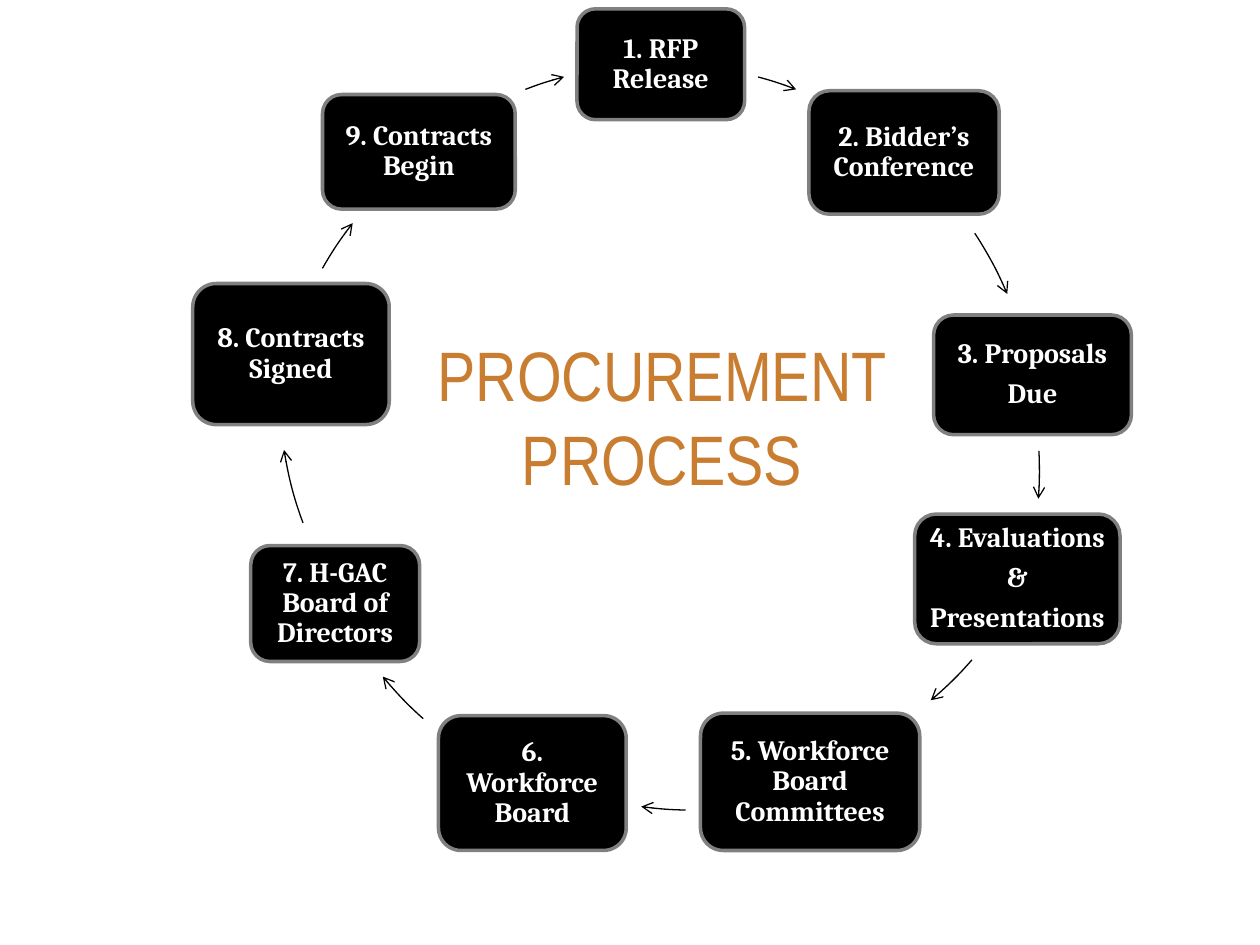
from dataclasses import dataclass

from lxml.etree import SubElement
from pptx import Presentation
from pptx.dml.color import RGBColor
from pptx.enum.shapes import MSO_SHAPE as Preset
from pptx.enum.text import MSO_ANCHOR as Anchor, PP_ALIGN as Align
from pptx.oxml.ns import qn
from pptx.shapes.autoshape import Shape
from pptx.slide import Slide
from pptx.util import Inches, Pt

RING_DIAMETER = 5.97
ANGLE_SCALE = 0.6


@dataclass(frozen=True)
class Step:
    label: str
    left: float
    top: float
    width: float
    height: float


@dataclass(frozen=True)
class Arc:
    left: float
    top: float
    start: float
    end: float


STEPS = (
    Step("1. RFP Release", 4.58, 0.07, 1.33, 0.88),
    Step("2. Bidder’s Conference", 6.42, 0.72, 1.51, 0.98),
    Step("3. Proposals\nDue", 7.41, 2.5, 1.57, 0.95),
    Step("4. Evaluations\n&\nPresentations", 7.26, 4.08, 1.63, 1.03),
    Step("5. Workforce Board Committees", 5.56, 5.66, 1.74, 1.09),
    Step("6. Workforce Board", 3.48, 5.68, 1.49, 1.07),
    Step("7. H-GAC Board of Directors", 1.99, 4.33, 1.34, 0.92),
    Step("8. Contracts Signed", 1.53, 2.25, 1.56, 1.12),
    Step("9. Contracts Begin", 2.56, 0.75, 1.53, 0.91),
)

ARCS = (
    Arc(2.26, 0.51, 285, 291.1),
    Arc(2.26, 0.51, 326.6, 337.1),
    Arc(2.28, 0.75, 357, 4.3),
    Arc(2.48, 0.29, 41.1, 49.9),
    Arc(2.51, 0.46, 91, 97.8),
    Arc(2.36, 0.49, 131.7, 140.6),
    Arc(2.22, 0.13, 159.7, 171.2),
    Arc(2.17, 0.62, 209.6, 217.9),
    Arc(2.26, 0.51, 248.9, 255.1),
)


def color(value: str) -> RGBColor:
    return RGBColor.from_string(value)


def style_text(shape: Shape, font_name: str, size: float, ink: str, bold: bool) -> None:
    for paragraph in shape.text_frame.paragraphs:
        paragraph.alignment = Align.CENTER
        for run in paragraph.runs:
            run.font.name = font_name
            run.font.size = Pt(size)
            run.font.bold = bold
            run.font.color.rgb = color(ink)


def draw_step(slide: Slide, step: Step) -> None:
    card = slide.shapes.add_shape(
        Preset.ROUNDED_RECTANGLE,
        Inches(step.left), Inches(step.top), Inches(step.width), Inches(step.height),
    )
    card.shadow.inherit = False
    card.fill.solid()
    card.fill.fore_color.rgb = color("000000")
    card.line.color.rgb = color("808080")
    card.line.width = Pt(2)
    frame = card.text_frame
    frame.text = step.label
    frame.word_wrap = True
    frame.vertical_anchor = Anchor.MIDDLE
    frame.margin_left = frame.margin_right = Inches(0.07)
    frame.margin_top = frame.margin_bottom = Inches(0.07)
    style_text(card, "Cambria", 16, "FFFFFF", True)
    for paragraph in frame.paragraphs:
        paragraph.line_spacing = 0.9
        paragraph.space_after = Pt(5.6)


def draw_arc(slide: Slide, arc: Arc) -> None:
    curve = slide.shapes.add_shape(
        Preset.ARC,
        Inches(arc.left), Inches(arc.top), Inches(RING_DIAMETER), Inches(RING_DIAMETER),
    )
    curve.adjustments[0] = arc.start * ANGLE_SCALE
    curve.adjustments[1] = arc.end * ANGLE_SCALE
    curve.shadow.inherit = False
    curve.fill.background()
    curve.line.color.rgb = color("000000")
    curve.line.width = Pt(0.75)
    SubElement(curve.line._get_or_add_ln(), qn("a:tailEnd"), type="arrow")


def draw_title(slide: Slide) -> None:
    title = slide.shapes.add_textbox(Inches(1.17), Inches(2.58), Inches(8.17), Inches(1.45))
    title.text_frame.word_wrap = True
    title.text_frame.text = "PROCUREMENT\vPROCESS"
    style_text(title, "Arial Narrow", 40, "C97D31", False)


def main() -> None:
    deck = Presentation()
    deck.slide_width = Inches(10)
    deck.slide_height = Inches(7.5)
    slide = deck.slides.add_slide(deck.slide_layouts[6])
    for step, arc in zip(STEPS, ARCS):
        draw_step(slide, step)
        draw_arc(slide, arc)
    draw_title(slide)
    deck.save("out.pptx")


if __name__ == "__main__":
    main()
